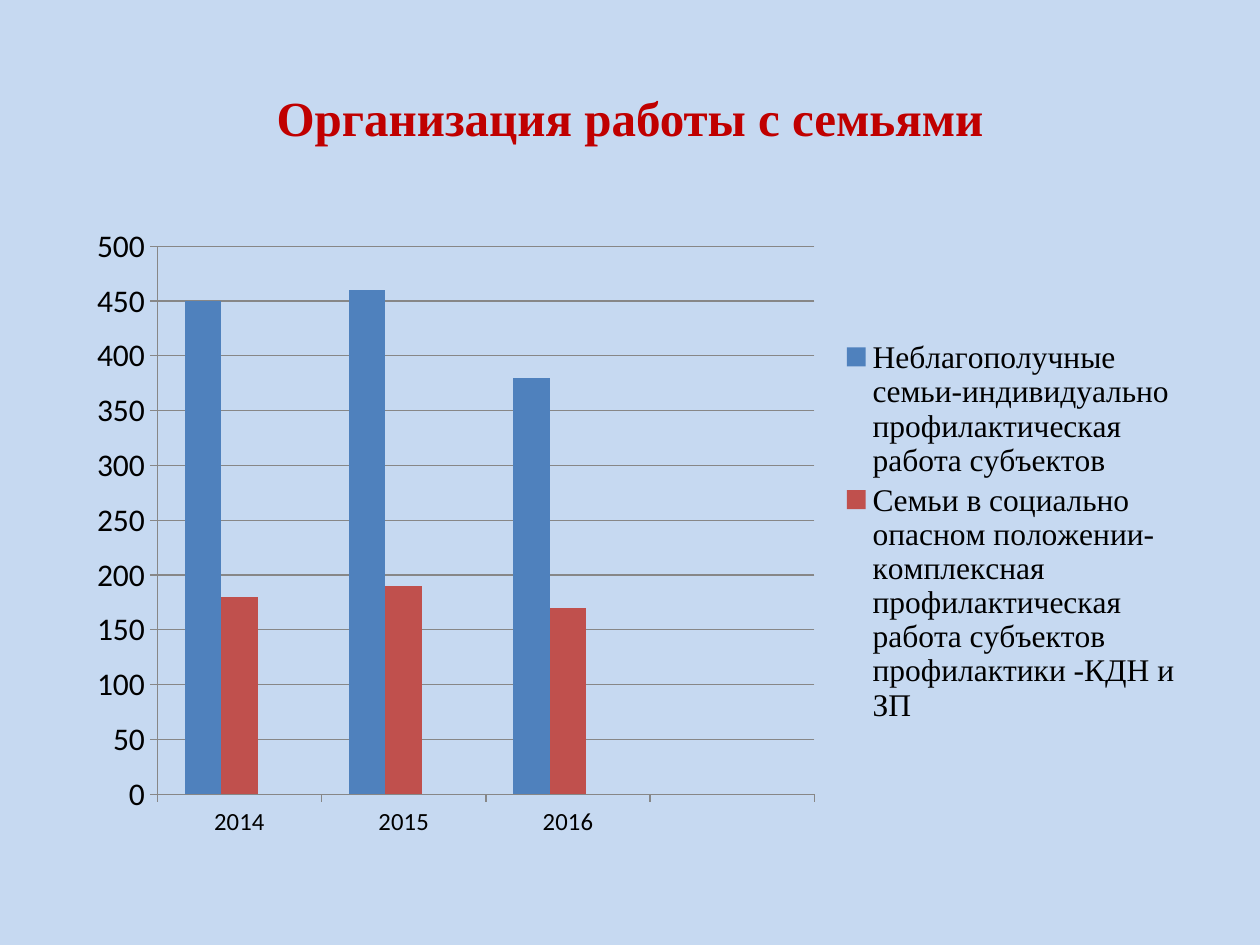
from lxml.etree import SubElement
from pptx import Presentation
from pptx.chart.data import CategoryChartData
from pptx.dml.color import RGBColor
from pptx.enum.chart import XL_CHART_TYPE, XL_LEGEND_POSITION, XL_TICK_MARK
from pptx.enum.text import MSO_ANCHOR, PP_ALIGN
from pptx.oxml.ns import qn
from pptx.util import Inches, Pt

SKY = RGBColor(0xC6, 0xD9, 0xF1)
CRIMSON = RGBColor(0xC0, 0x00, 0x00)
BLACK = RGBColor(0x00, 0x00, 0x00)
GRAY = RGBColor(0x87, 0x87, 0x87)
BLUE = RGBColor(0x4F, 0x81, 0xBD)
RED = RGBColor(0xC0, 0x50, 0x4D)
GREEN = RGBColor(0x9B, 0xBB, 0x59)

YEARS = ["2014", "2015", "2016", ""]
SERIES = [
    ("Неблагополучные семьи-индивидуально профилактическая работа субъектов",
     [450, 460, 380, None], BLUE),
    ("Семьи в социально опасном положении-комплексная профилактическая "
     "работа субъектов профилактики -КДН и ЗП", [180, 190, 170, None], RED),
    ("Series 3", [None] * 4, GREEN),  # empty slot beside each pair of columns
]


class SlideBuilder:
    """Holds the style and the current slide; places by shares of its size."""
    serif, sans = "Times New Roman", "Calibri"

    def __init__(self, deck):
        self.deck = deck
        self.slide = deck.slides.add_slide(deck.slide_layouts[5])
        self.slide.background.fill.solid()
        self.slide.background.fill.fore_color.rgb = SKY

    def area(self, left, top, width, height):
        wide, high = self.deck.slide_width, self.deck.slide_height
        return (round(left * wide), round(top * high),
                round(width * wide), round(height * high))

    def style(self, font, name, size, color):
        font.name, font.size, font.color.rgb = name, Pt(size), color

    def title(self, text, *shares):
        box = self.slide.shapes.title
        box.left, box.top, box.width, box.height = self.area(*shares)
        box.text_frame.vertical_anchor = MSO_ANCHOR.MIDDLE
        para = box.text_frame.paragraphs[0]
        para.alignment = PP_ALIGN.CENTER
        span = para.add_run()
        span.text = text
        self.style(span.font, self.serif, 28, CRIMSON)
        span.font.bold = True

    def columns(self, categories, series, *shares):
        data = CategoryChartData()
        data.categories = categories
        for name, values, _ in series:
            data.add_series(name, values)
        chart = self.slide.shapes.add_chart(
            XL_CHART_TYPE.COLUMN_CLUSTERED, *self.area(*shares), data).chart
        chart.has_title = False
        self.style(chart.font, self.sans, 18, BLACK)
        plot = chart.plots[0]
        plot.gap_width, plot.overlap, plot.vary_by_categories = 150, 0, False
        for bars, (_, _, color) in zip(plot.series, series):
            bars.format.fill.solid()
            bars.format.fill.fore_color.rgb = color
        self.axes(chart)
        self.legend(chart)
        return chart

    def axes(self, chart):
        values = chart.value_axis
        values.minimum_scale, values.maximum_scale, values.major_unit = 0, 500, 50
        values.has_major_gridlines = True
        for axis, size in ((chart.category_axis, 14.1), (values, 18)):
            axis.major_tick_mark = XL_TICK_MARK.OUTSIDE
            axis.minor_tick_mark = XL_TICK_MARK.NONE
            self.style(axis.tick_labels.font, self.sans, size, BLACK)
            self.rule(axis.format.line)
        self.rule(values.major_gridlines.format.line)

    def rule(self, line):
        line.color.rgb, line.width = GRAY, Pt(0.75)

    def legend(self, chart):
        chart.has_legend = True
        legend = chart.legend
        legend.position = XL_LEGEND_POSITION.RIGHT
        legend.include_in_layout = False
        self.style(legend.font, self.serif, 18, BLACK)

    def hide_legend_entry(self, chart, index):
        position = chart.legend._element.find(qn("c:legendPos"))
        entry = position.makeelement(qn("c:legendEntry"))
        SubElement(entry, qn("c:idx")).set("val", str(index))
        SubElement(entry, qn("c:delete")).set("val", "1")
        position.addnext(entry)

    def arrange(self, element, before, target, **shares):
        """Fix the place of a chart part as shares of the chart."""
        for old in element.findall(qn("c:layout")):
            element.remove(old)
        layout = element.makeelement(qn("c:layout"))
        manual = SubElement(layout, qn("c:manualLayout"))
        if target:
            SubElement(manual, qn("c:layoutTarget")).set("val", target)
        for side in "xy":
            SubElement(manual, qn(f"c:{side}Mode")).set("val", "edge")
        for side, share in shares.items():
            SubElement(manual, qn(f"c:{side}")).set("val", str(share))
        element.find(qn(before)).addprevious(layout)


def main():
    deck = Presentation()
    deck.slide_width, deck.slide_height = Inches(10), Inches(7.5)
    page = SlideBuilder(deck)

    # Heading
    page.title("Организация работы с семьями", 0.05, 0.04, 0.9, 1 / 6)

    # Families by year
    chart = page.columns(YEARS, SERIES, 0.059, 0.227, 0.89, 0.672)
    page.hide_legend_entry(chart, 2)
    plot_area = chart.plots[0]._element.getparent()
    page.arrange(plot_area, "c:barChart", "inner", x=0.074, y=0.05, w=0.586, h=0.863)
    page.arrange(chart.legend._element, "c:overlay", None, x=0.68, y=0.19, w=0.31, h=0.62)

    deck.save("out.pptx")


if __name__ == "__main__":
    main()
